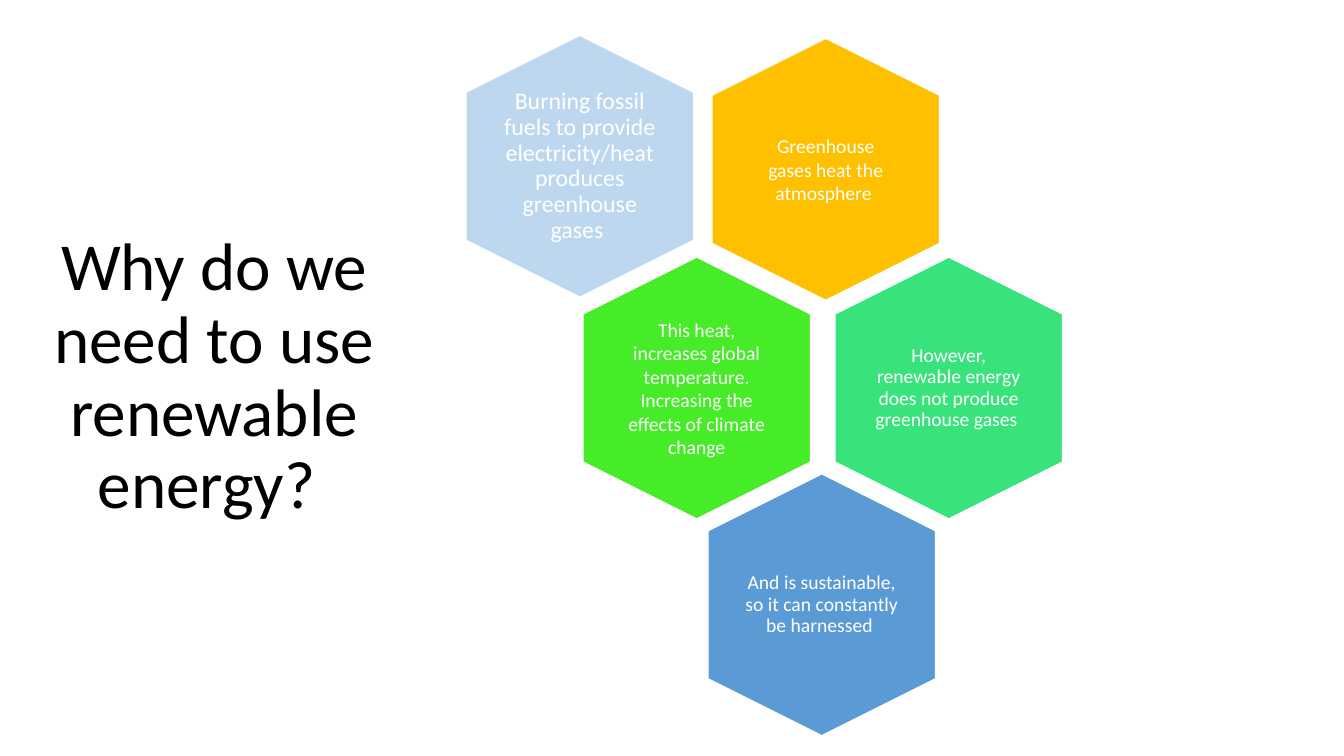
"""Build the renewable energy slide with its cluster of hexagons."""
from dataclasses import dataclass

from pptx import Presentation
from pptx.dml.color import RGBColor as Rgb
from pptx.enum.shapes import MSO_SHAPE as Shape
from pptx.enum.text import MSO_ANCHOR as Anchor, MSO_AUTO_SIZE as Fit, PP_ALIGN as Align
from pptx.shapes.shapetree import GroupShapes as Group
from pptx.text.text import TextFrame as Frame
from pptx.util import Inches, Pt

WIDE, HIGH = Inches(13.33), Inches(7.5)


@dataclass(frozen=True)
class Theme:
    font: str = "Calibri"
    ink: str = "000000"
    white: str = "FFFFFF"
    sky: str = "BDD7EE"
    gold: str = "FFC000"
    lime: str = "46EC27"
    mint: str = "39E37B"
    blue: str = "5B9BD5"
    head: int = 48
    large: int = 17
    body: int = 14
    edge: int = 1
    tight: float = 0.9


@dataclass(frozen=True)
class Box:
    mid: float
    row: float
    wide: float
    high: float

    def place(self) -> tuple[int, int, int, int]:
        left = (self.mid - self.wide / 2) * WIDE / 100
        top = (self.row - self.high / 2) * HIGH / 100
        return int(left), int(top), int(self.wide * WIDE / 100), int(self.high * HIGH / 100)


@dataclass(frozen=True)
class Cell:
    mid: float
    row: float
    fill: str
    text: str
    size: int
    lead: float
    pad: float


LOOK = Theme()
CELLS = (
    Cell(61.44, 22.4, LOOK.gold, "Greenhouse gases heat the atmosphere ", LOOK.body, 1.0, 0.06),
    Cell(43.14, 22, LOOK.sky,
         "Burning fossil fuels to provide electricity/heat produces greenhouse gases ",
         LOOK.large, LOOK.tight, 0),
    Cell(51.84, 51.33, LOOK.lime,
         "This heat, increases global temperature. Increasing the effects of climate change",
         LOOK.body, 1.0, 0.06),
    Cell(70.59, 51.33, LOOK.mint,
         "However, renewable energy does not produce greenhouse gases ",
         LOOK.body, LOOK.tight, 0),
    Cell(61.14, 80, LOOK.blue,
         "And is sustainable, so it can constantly be harnessed ",
         LOOK.body, LOOK.tight, 0),
)


def write(frame: Frame, text: str, size: int, tint: str, lead: float) -> None:
    frame.word_wrap = True
    frame.auto_size = Fit.NONE
    frame.vertical_anchor = Anchor.MIDDLE
    para = frame.paragraphs[0]
    para.alignment = Align.CENTER
    para.line_spacing = lead
    run = para.add_run()
    run.text = text
    run.font.name = LOOK.font
    run.font.size = Pt(size)
    run.font.color.rgb = Rgb.from_string(tint)


def draw(group: Group, cell: Cell) -> None:
    hexa = group.add_shape(Shape.HEXAGON, *Box(cell.mid, cell.row, 19.5, 30.13).place())
    hexa.adjustments[0] = 0.25
    hexa.rotation = 90
    hexa.shadow.inherit = False
    hexa.fill.solid()
    hexa.fill.fore_color.rgb = Rgb.from_string(cell.fill)
    hexa.line.color.rgb = Rgb.from_string(LOOK.white)
    hexa.line.width = Pt(LOOK.edge)
    note = group.add_textbox(*Box(cell.mid, cell.row, 11.63, 23.87).place())
    frame = note.text_frame
    frame.margin_left = frame.margin_right = Inches(cell.pad)
    frame.margin_top = frame.margin_bottom = Inches(cell.pad)
    write(frame, cell.text, cell.size, LOOK.white, cell.lead)


def main() -> None:
    deck = Presentation()
    deck.slide_width, deck.slide_height = WIDE, HIGH
    slide = deck.slides.add_slide(deck.slide_layouts[5])
    title = slide.shapes.title
    title.left, title.top, title.width, title.height = Box(15.94, 50, 31.88, 100).place()
    write(title.text_frame, "Why do we need to use renewable energy? ",
          LOOK.head, LOOK.ink, LOOK.tight)
    group = slide.shapes.add_group_shape().shapes
    for cell in CELLS:
        draw(group, cell)
    deck.save("out.pptx")


if __name__ == "__main__":
    main()
